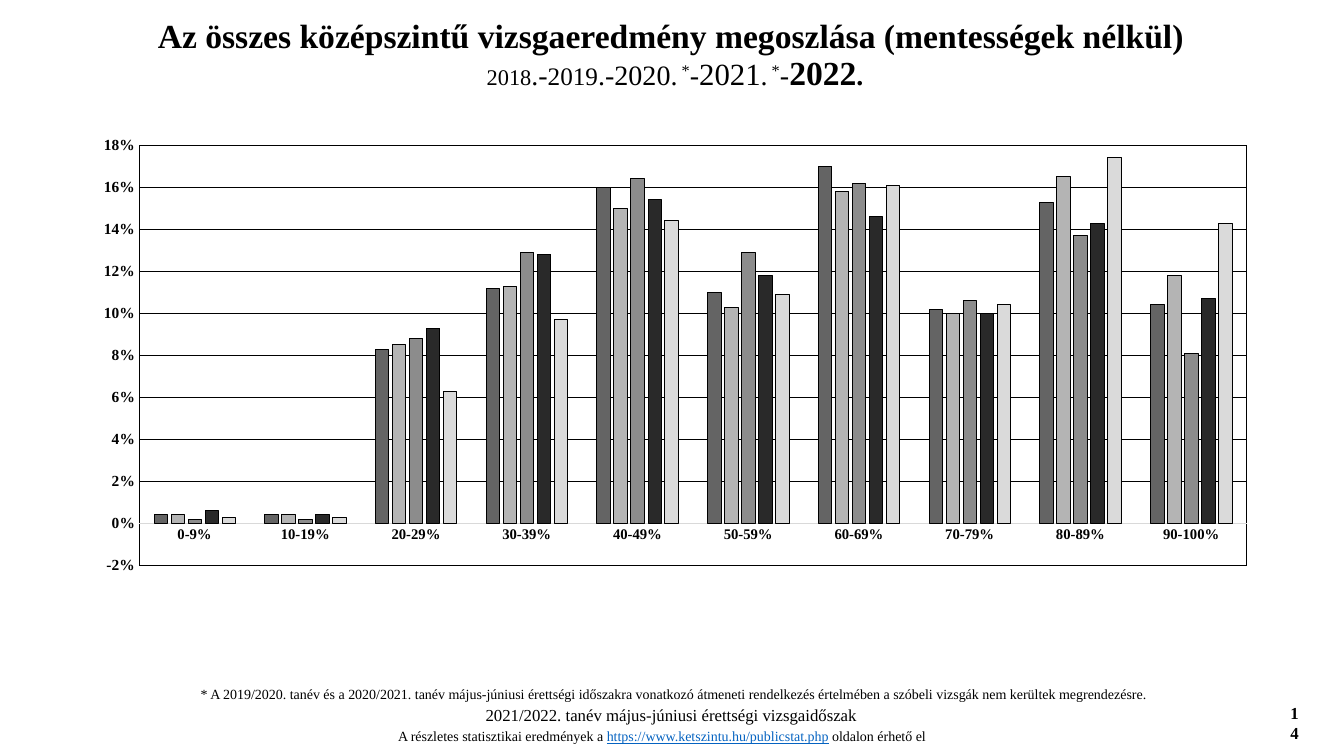
"""Build the slide on the distribution of intermediate-level exam results."""
from dataclasses import dataclass

from lxml.etree import SubElement
from pptx import Presentation
from pptx.chart.data import CategoryChartData
from pptx.dml.color import RGBColor as RGB
from pptx.enum.chart import XL_CHART_TYPE as CT, XL_TICK_MARK as TM
from pptx.enum.text import MSO_ANCHOR as VA, MSO_AUTO_SIZE as AS, PP_ALIGN as AL
from pptx.oxml import parse_xml
from pptx.oxml.ns import nsdecls, qn
from pptx.util import Inches, Pt


@dataclass(frozen=True)
class Theme:
    """Colours, font and type sizes."""
    font: str = "Times New Roman"
    ink: str = "000000"
    paper: str = "FFFFFF"
    link: str = "0563C1"
    axis: str = "D9D9D9"
    bars: tuple = ("646464", "B4B4B4", "8C8C8C", "292929", "DADADA")
    title: float = 24
    year: float = 20
    body: float = 12
    note: float = 10
    cat: float = 10.5
    val: float = 11


T = Theme()
WIDTH, HEIGHT = Inches(13.33), Inches(7.5)
COLS = ROWS = 100
MAIN_LEFT, MAIN_WIDTH = 5.93, 88.6

HEADING = "Az összes középszintű vizsgaeredmény megoszlása (mentességek nélkül) "
YEARS = [("2018", {"size": 16}), (".-", {}), ("2019", {"size": 18}),
         (".-2020.", {}), (" *", {"raised": True}), ("-", {}),
         ("2021", {"size": 22}), (".", {}), (" *", {"raised": True}), ("-", {}),
         ("2022", {"size": T.title, "bold": True}), (".", {"bold": True})]
PERIOD = "2021/2022. tanév május-júniusi érettségi vizsgaidőszak"
FOOTNOTE = ("* A 2019/2020. tanév és a 2020/2021. tanév május-júniusi érettségi "
            "időszakra vonatkozó átmeneti rendelkezés értelmében a szóbeli vizsgák "
            "nem kerültek megrendezésre. ")
DETAILS = [("A részletes statisztikai eredmények a ", {}),
           ("https://www.ketszintu.hu/publicstat.php",
            {"color": T.link, "underline": True}),
           (" oldalon érhető el", {})]
BANDS = [f"{low}-{low + 9}%" for low in range(0, 90, 10)] + ["90-100%"]
RESULTS = [
    (.004, .004, .083, .112, .16, .11, .17, .102, .153, .104),
    (.004, .004, .085, .113, .15, .103, .158, .1, .165, .118),
    (.002, .002, .088, .129, .164, .129, .162, .106, .137, .081),
    (.006, .004, .093, .128, .154, .118, .146, .1, .143, .107),
    (.003, .003, .063, .097, .144, .109, .161, .104, .174, .143),
]


def grid(col, row, cols, rows):
    """Turn grid columns and rows into left, top, width and height."""
    return (int(WIDTH * col / COLS), int(HEIGHT * row / ROWS),
            int(WIDTH * cols / COLS), int(HEIGHT * rows / ROWS))


def style(font, size, color=T.ink, bold=False, underline=None):
    """Format a font object."""
    font.name, font.size, font.bold = T.font, Pt(size), bold
    font.underline = underline
    font.color.rgb = RGB.from_string(color)


def add_run(p, text, size=T.note, raised=False, **fmt):
    """Add formatted text to a paragraph."""
    r = p.add_run()
    r.text = text
    style(r.font, size, **fmt)
    if raised:
        r.font._element.set("baseline", "30000")


def add_text(slide, area, runs, size=T.note, align=AL.LEFT, bold=False):
    """Add a text box with one paragraph of runs."""
    tf = slide.shapes.add_textbox(*grid(*area)).text_frame
    tf.word_wrap = True
    p = tf.paragraphs[0]
    p.alignment = align
    for text, fmt in runs:
        add_run(p, text, **{"size": size, "bold": bold, **fmt})


def add_title(slide):
    """Place and fill the title placeholder."""
    sp = slide.shapes.title
    sp.left, sp.top, sp.width, sp.height = grid(MAIN_LEFT, 2.67, MAIN_WIDTH, 9.47)
    tf = sp.text_frame
    tf.auto_size, tf.vertical_anchor = AS.NONE, VA.MIDDLE
    p = tf.paragraphs[0]
    p.alignment, p.line_spacing = AL.CENTER, 0.9
    add_run(p, HEADING, size=T.title, bold=True)
    p.add_line_break()
    for text, fmt in YEARS:
        add_run(p, text, **{"size": T.year, **fmt})


def line(fmt, color, width):
    """Format a line."""
    fmt.color.rgb = RGB.from_string(color)
    fmt.width = Pt(width)


def format_axis(axis, size):
    """Give an axis its labels and remove its ticks."""
    axis.major_tick_mark = axis.minor_tick_mark = TM.NONE
    style(axis.tick_labels.font, size, bold=True)


def format_plot_area(chart):
    """Set the position, fill and frame of the plot area."""
    area = chart._chartSpace.find(".//" + qn("c:plotArea"))
    for old in area.findall(qn("c:layout")):
        area.remove(old)
    layout = parse_xml(f"<c:layout {nsdecls('c')}/>")
    manual = SubElement(layout, qn("c:manualLayout"))
    settings = {"layoutTarget": "inner", "xMode": "edge", "yMode": "edge",
                "x": 0.05, "y": 0.04, "w": 0.93, "h": 0.92}
    for name, value in settings.items():
        SubElement(manual, qn(f"c:{name}")).set("val", str(value))
    area.insert(0, layout)
    area.append(parse_xml(
        f'<c:spPr {nsdecls("c", "a")}><a:solidFill><a:srgbClr val="{T.paper}"/>'
        f'</a:solidFill><a:ln w="{Pt(0.5)}"><a:solidFill><a:srgbClr val="{T.ink}"/>'
        '</a:solidFill></a:ln></c:spPr>'))


def add_results_chart(slide):
    """Add the clustered columns, one series for each year."""
    data = CategoryChartData(number_format="0%")
    data.categories = BANDS
    for year, values in enumerate(RESULTS, 2018):
        data.add_series(str(year), values)
    area = grid(MAIN_LEFT, 16.8, MAIN_WIDTH, 60.4)
    chart = slide.shapes.add_chart(CT.COLUMN_CLUSTERED, *area, data).chart
    chart.has_legend = chart.has_title = False
    style(chart.font, T.note, bold=True)
    plot = chart.plots[0]
    plot.gap_width, plot.overlap, plot.vary_by_categories = 219, -27, False
    for series, color in zip(plot.series, T.bars):
        series.format.fill.solid()
        series.format.fill.fore_color.rgb = RGB.from_string(color)
        series.invert_if_negative = False
        line(series.format.line, T.ink, 0.5)
    cat, val = chart.category_axis, chart.value_axis
    format_axis(cat, T.cat)
    line(cat.format.line, T.axis, 0.75)
    format_axis(val, T.val)
    val.minimum_scale, val.maximum_scale, val.major_unit = -0.02, 0.18, 0.02
    val.tick_labels.number_format = "0%"
    val.tick_labels.number_format_is_linked = False
    val.format.line.fill.background()
    line(val.major_gridlines.format.line, T.ink, 0.5)
    format_plot_area(chart)


def main():
    """Assemble and save the slide."""
    prs = Presentation()
    prs.slide_width, prs.slide_height = WIDTH, HEIGHT
    slide = prs.slides.add_slide(prs.slide_layouts[5])
    add_title(slide)
    add_results_chart(slide)
    add_text(slide, (MAIN_LEFT, 90, MAIN_WIDTH, 3.6), [(FOOTNOTE, {})], align=AL.CENTER)
    add_text(slide, (26.93, 92.53, 46.06, 4), [(PERIOD, {})], T.body, AL.CENTER)
    add_text(slide, (28.88, 95.6, 42.24, 3.6), DETAILS)
    add_text(slide, (95.27, 92.27, 2.18, 4), [("14", {})], T.body, bold=True)
    prs.save("out.pptx")


if __name__ == "__main__":
    main()
